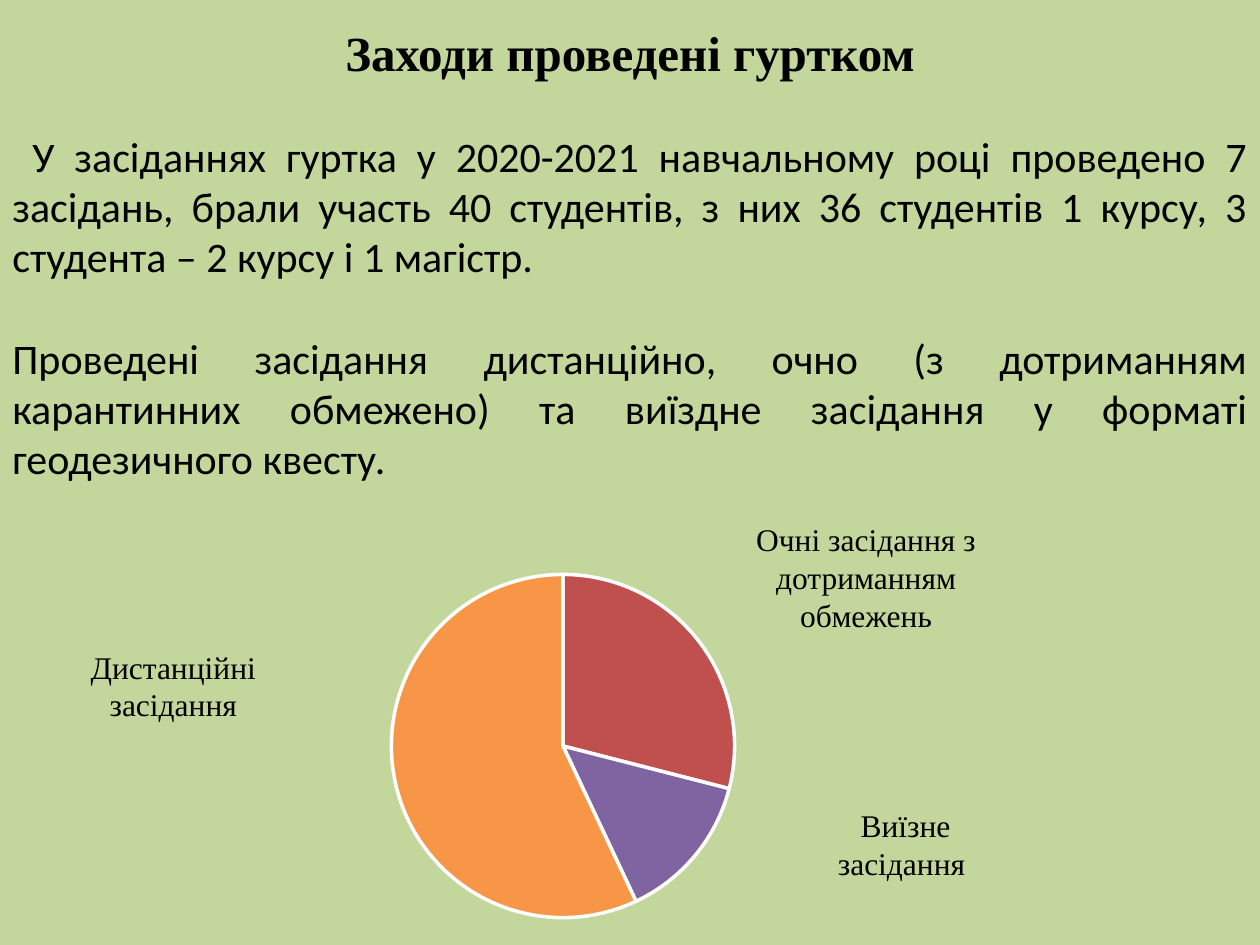
import pptx
import pptx.util
import pptx.chart.data
import pptx.dml.color
import pptx.enum.chart
import pptx.enum.text

Cm, Pt = pptx.util.Cm, pptx.util.Pt
ALIGN = pptx.enum.text.PP_ALIGN
SERIF, SANS = "Times New Roman", "Calibri"
WIDE = 25.4

LABELS = [
    ((1.5, 12.93, 3.99, 1.8), ["Дистанційні", "засідання"]),
    ((14.78, 10.36, 5.36, 2.57), ["Очні засідання з дотриманням обмежень"]),
    ((16.26, 16.13, 3.99, 1.8), ["Виїзне засідання "]),
]
BODY = [
    " У засіданнях гуртка у 2020-2021 навчальному році проведено 7 засідань, "
    "брали участь 40 студентів, з них 36 студентів 1 курсу, 3 студента – "
    "2 курсу і 1 магістр.",
    "Проведені засідання дистанційно, очно (з дотриманням карантинних "
    "обмежено) та виїздне засідання у форматі геодезичного квесту. ",
]
SLICES = [("1", 29, "C0504D"), ("2", 14, "8064A2"), ("3", 57, "F79646")]


def paint(fill, tone):
    fill.solid()
    fill.fore_color.rgb = pptx.dml.color.RGBColor.from_string(tone)


def write(frame, lines, size, face, align, bold=False, gap=0):
    frame.word_wrap = True
    frame.auto_size = pptx.enum.text.MSO_AUTO_SIZE.NONE
    frame.vertical_anchor = pptx.enum.text.MSO_ANCHOR.TOP
    for num, line in enumerate(lines):
        para = frame.add_paragraph() if num else frame.paragraphs[0]
        para.alignment = align
        para.space_before = Pt(gap if num else 0)
        run = para.add_run()
        run.text = line
        run.font.size, run.font.name, run.font.bold = Pt(size), face, bold
        paint(run.font.fill, "000000")


def add_title(slide, text):
    title = slide.shapes.title
    title.left, title.top = Cm(0), Cm(0.33)
    title.width, title.height = Cm(WIDE), Cm(1.5)
    write(title.text_frame, [text], 28, SERIF, ALIGN.CENTER, bold=True)


def add_text(slide, box, lines, *style, **extra):
    shape = slide.shapes.add_textbox(*map(Cm, box))
    write(shape.text_frame, lines, *style, **extra)


def add_pie(slide, box):
    data = pptx.chart.data.CategoryChartData()
    data.categories = [name for name, _, _ in SLICES]
    data.add_series("Series 1", [val for _, val, _ in SLICES])
    kind = pptx.enum.chart.XL_CHART_TYPE.PIE
    chart = slide.shapes.add_chart(kind, *map(Cm, box), data).chart
    chart.has_title = chart.has_legend = False
    chart.font.size, chart.font.name = Pt(10), SANS
    paint(chart.font.fill, "000000")
    plot = chart.plots[0]
    plot.vary_by_categories = True
    for num, (_, _, tone) in enumerate(SLICES):
        style = plot.series[0].points[num].format
        paint(style.fill, tone)
        paint(style.line.fill, "FFFFFF")
        style.line.width = Pt(2)


def main():
    deck = pptx.Presentation()
    deck.slide_width, deck.slide_height = Cm(WIDE), Cm(19.05)
    slide = deck.slides.add_slide(deck.slide_layouts[5])
    paint(slide.background.fill, "C3D69B")

    # Heading and report
    add_title(slide, "Заходи проведені гуртком")
    add_text(slide, (0, 2.5, WIDE, 8.68), BODY, 24, SANS, ALIGN.JUSTIFY, gap=29)

    # Pie of meeting types with its labels
    add_pie(slide, (5, 11.23, 12.7, 7.62))
    for box, lines in LABELS:
        add_text(slide, box, lines, 18, SERIF, ALIGN.CENTER)

    deck.save("out.pptx")


if __name__ == "__main__":
    main()
